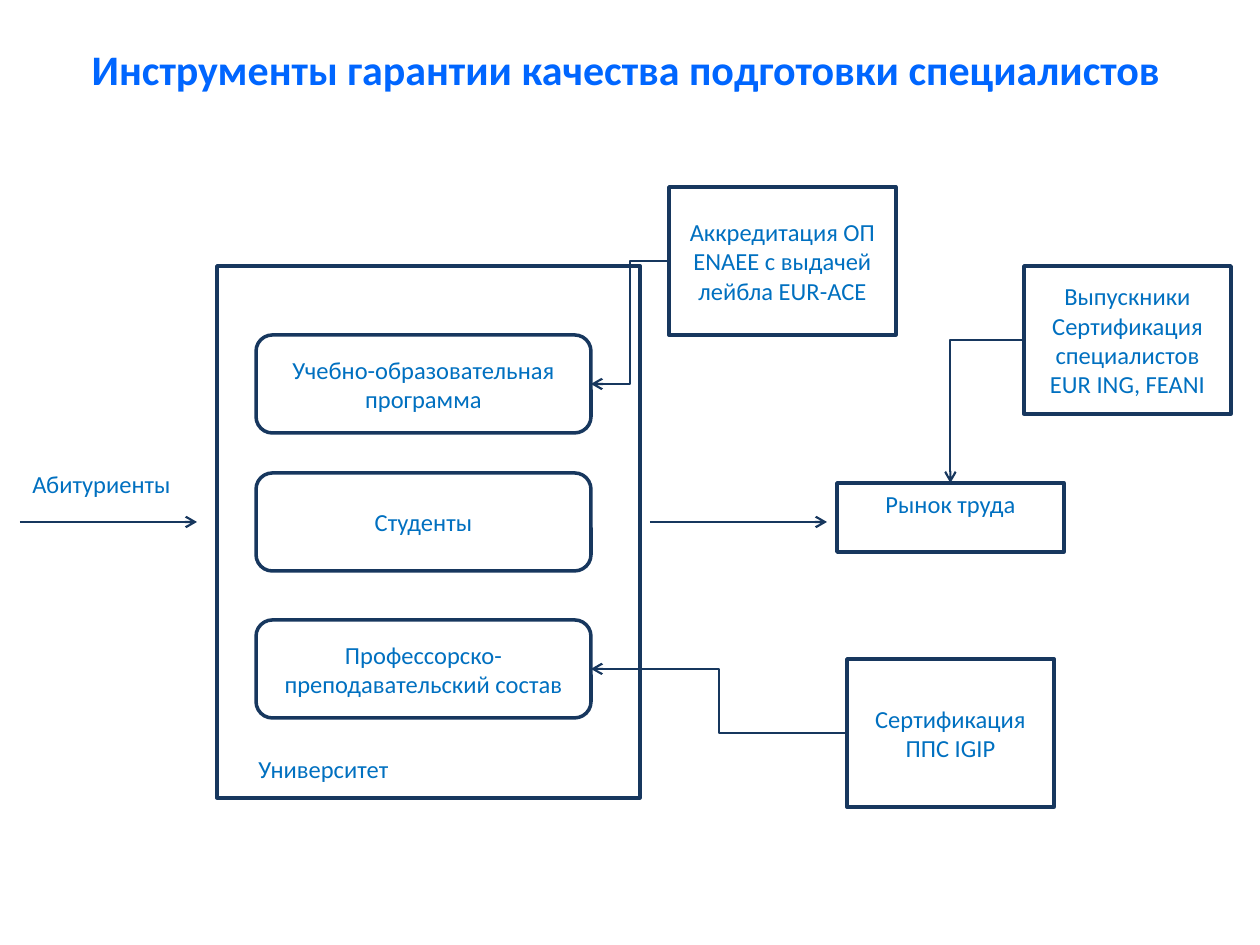
import pptx
import pptx.dml.color
import pptx.enum.shapes
import pptx.enum.text
import pptx.oxml.ns
import pptx.util

EMU_PER_PX = 914400 / 126
COLORS = {"title": "0066FF", "text": "0070C0", "line": "17375E", "fill": "FFFFFF"}
FONT = "Calibri"
SHAPES = pptx.enum.shapes.MSO_SHAPE
CONNECTORS = pptx.enum.shapes.MSO_CONNECTOR
ANCHORS = pptx.enum.text.MSO_ANCHOR
ALIGN = pptx.enum.text.PP_ALIGN


def emu(px):
    return pptx.util.Emu(round(px * EMU_PER_PX))


def color(name):
    return pptx.dml.color.RGBColor.from_string(COLORS[name])


class Diagram:
    def __init__(self, slide):
        self.slide = slide

    def add_text(self, shape, lines, align=ALIGN.CENTER, anchor=ANCHORS.MIDDLE,
                 size=14, bold=False, ink="text", wrap=True):
        frame = shape.text_frame
        frame.word_wrap = wrap
        frame.vertical_anchor = anchor
        for index, line in enumerate(lines):
            para = frame.add_paragraph() if index else frame.paragraphs[0]
            para.alignment = align
            span = para.add_run()
            span.text = line
            span.font.name = FONT
            span.font.size = pptx.util.Pt(size)
            span.font.bold = bold
            span.font.color.rgb = color(ink)

    def title(self, text, *place):
        box = self.slide.shapes.add_textbox(*map(emu, place))
        self.add_text(box, [text], size=24, bold=True, ink="title")

    def label(self, text, *place):
        box = self.slide.shapes.add_textbox(*map(emu, place))
        self.add_text(box, [text], align=ALIGN.LEFT, anchor=ANCHORS.TOP, wrap=False)

    def box(self, lines, *place, kind=SHAPES.RECTANGLE, anchor=ANCHORS.MIDDLE):
        shape = self.slide.shapes.add_shape(kind, *map(emu, place))
        shape.shadow.inherit = False
        shape.fill.solid()
        shape.fill.fore_color.rgb = color("fill")
        shape.line.color.rgb = color("line")
        shape.line.width = pptx.util.Pt(2)
        self.add_text(shape, lines, anchor=anchor)
        return shape

    def arrow(self, kind, *ends):
        """Draw an arrow between two points given in EMU."""
        connector = self.slide.shapes.add_connector(kind, *ends)
        connector.line.color.rgb = color("line")
        connector.line.width = pptx.util.Pt(1.25)
        properties = connector._element.spPr
        line = properties.get_or_add_ln()
        head = pptx.oxml.ns.qn("a:tailEnd")
        line.append(line.makeelement(head, {"type": "arrow"}))
        effects = pptx.oxml.ns.qn("a:effectLst")
        properties.append(properties.makeelement(effects, {}))
        return connector

    def flow(self, left, right, y):
        self.arrow(CONNECTORS.STRAIGHT, emu(left), emu(y), emu(right), emu(y))

    def elbow_to_side(self, source, target):
        """Link the left side of source to the right side of target."""
        self.arrow(CONNECTORS.ELBOW,
                   source.left, source.top + source.height // 2,
                   target.left + target.width, target.top + target.height // 2)

    def elbow_to_top(self, source, target):
        """Link the left side of source to the top of target with one bend."""
        connector = self.arrow(CONNECTORS.ELBOW,
                               source.left, source.top + source.height // 2,
                               target.left + target.width // 2, target.top)
        connector._element.spPr.prstGeom.set("prst", "bentConnector2")


def main():
    deck = pptx.Presentation()
    deck.slide_width = emu(1260)
    deck.slide_height = emu(945)
    diagram = Diagram(deck.slides.add_slide(deck.slide_layouts[6]))

    diagram.title("Инструменты гарантии качества подготовки специалистов",
                  59, 0, 1134, 137)

    diagram.box([], 217, 266, 423, 532)
    program, students, staff = [
        diagram.box([text], 256, top, 335, 98, kind=SHAPES.ROUNDED_RECTANGLE)
        for text, top in [
            ("Учебно-образовательная программа", 335),
            ("Студенты", 473),
            ("Профессорско-преподавательский состав", 620),
        ]
    ]
    diagram.label("Абитуриенты", 20, 463, 178, 43)
    diagram.label("Университет", 246, 748, 169, 43)
    for left in (20, 650):
        diagram.flow(left, left + 177, 522)

    market = diagram.box(["Рынок труда"], 837, 483, 227, 69, anchor=ANCHORS.TOP)
    graduates = diagram.box(
        ["Выпускники", "Сертификация специалистов EUR ING, FEANI"],
        1024, 266, 207, 148)
    certification = diagram.box(["Сертификация ППС IGIP"], 847, 659, 207, 148)
    accreditation = diagram.box(
        ["Аккредитация ОП ENAEE с выдачей лейбла EUR-ACE"], 669, 187, 227, 148)

    diagram.elbow_to_top(graduates, market)
    diagram.elbow_to_side(certification, staff)
    diagram.elbow_to_side(accreditation, program)

    deck.save("out.pptx")


if __name__ == "__main__":
    main()
